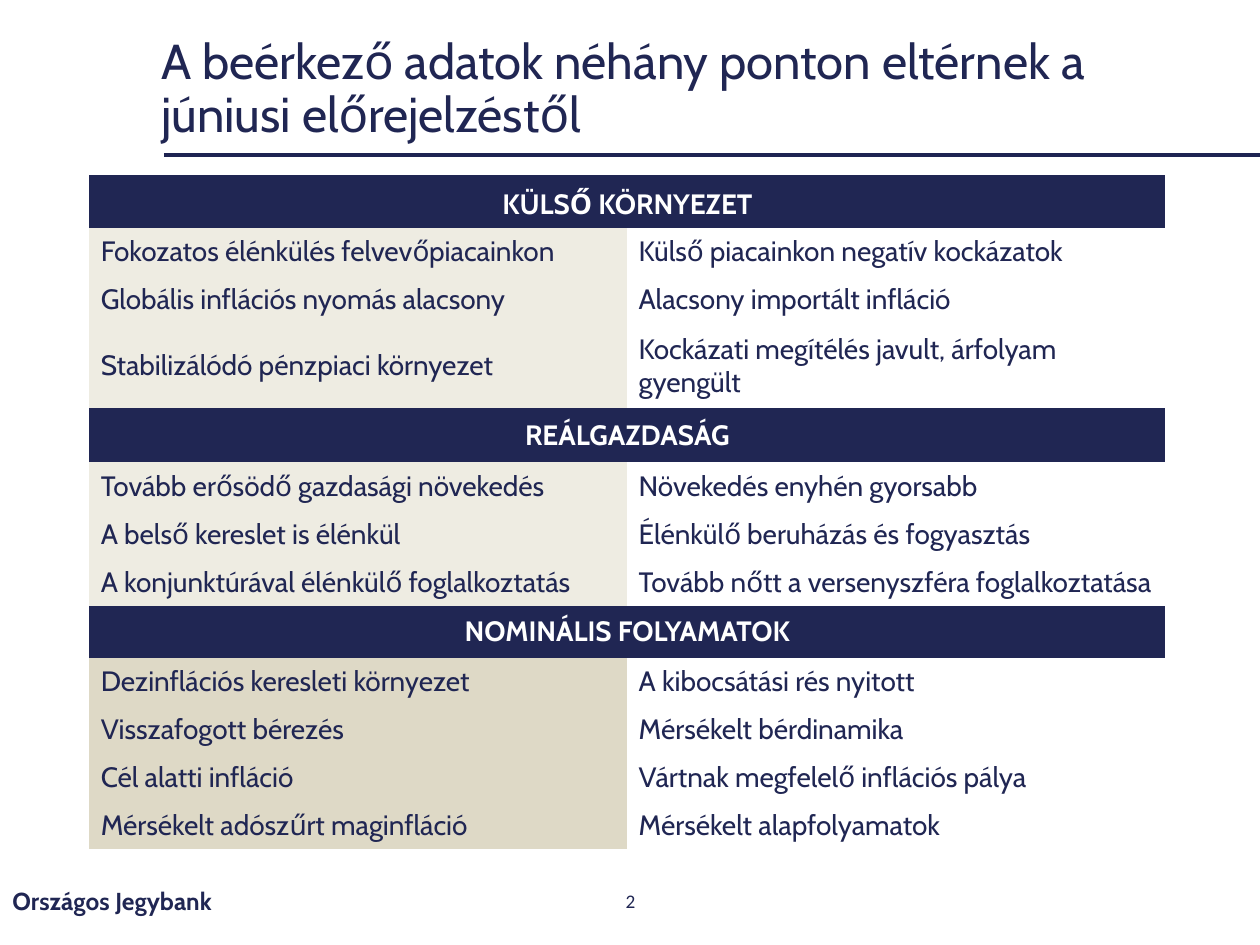
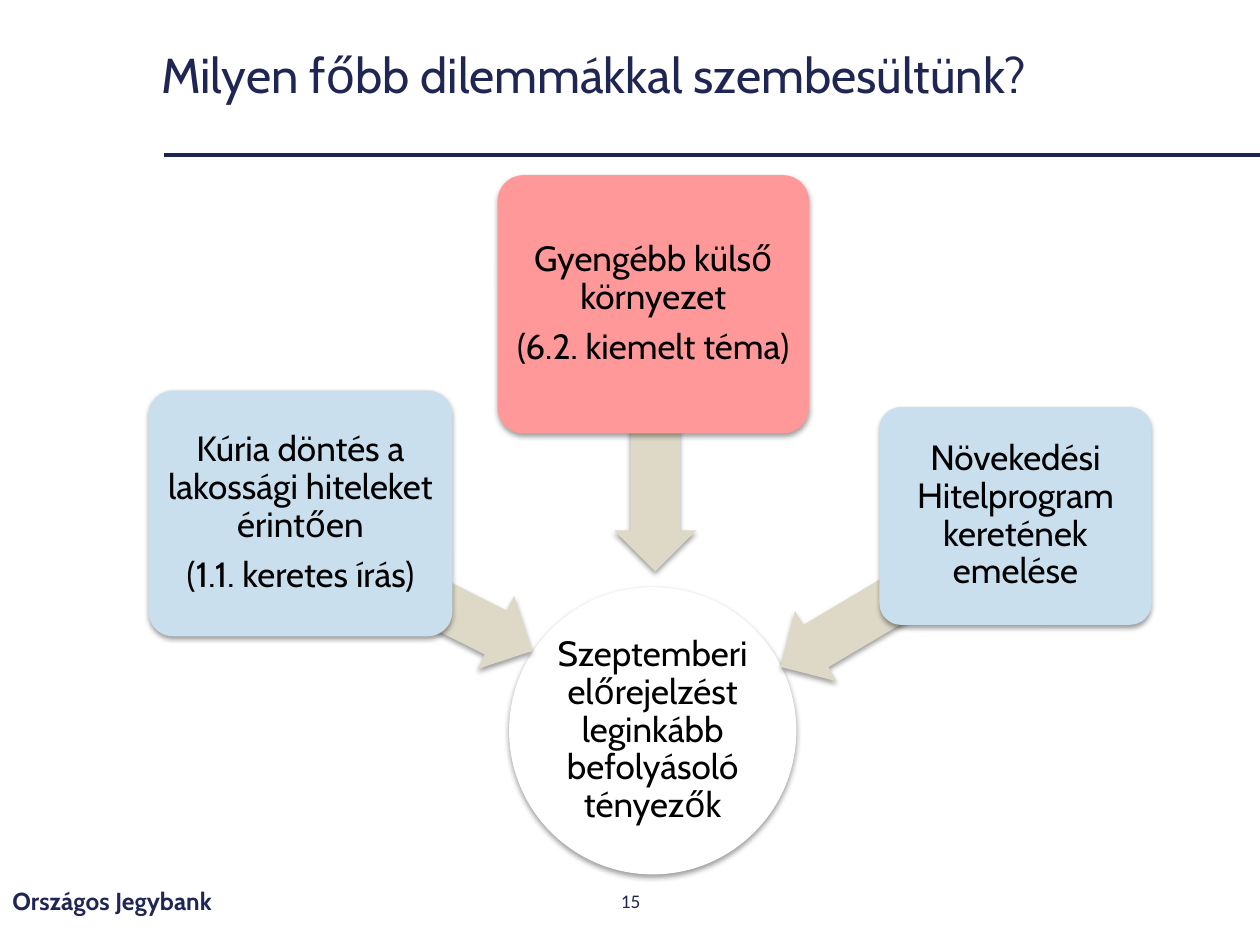
from lxml import etree
from pptx import Presentation
from pptx.dml.color import RGBColor
from pptx.enum.shapes import MSO_CONNECTOR, MSO_SHAPE
from pptx.enum.text import MSO_ANCHOR, PP_ALIGN
from pptx.oxml.ns import qn
from pptx.util import Inches, Pt

LEFT, CENTER = PP_ALIGN.LEFT, PP_ALIGN.CENTER
MIDDLE, BOTTOM = MSO_ANCHOR.MIDDLE, MSO_ANCHOR.BOTTOM
ROUND, OVAL = MSO_SHAPE.ROUNDED_RECTANGLE, MSO_SHAPE.OVAL
ARROW, STRAIGHT = MSO_SHAPE.LEFT_ARROW, MSO_CONNECTOR.STRAIGHT

# The slide is a grid of 100 columns and 75 rows
COLS, ROWS = 100, 75
NAVY, RULE, WHITE, BLACK = "202653", "1E2452", "FFFFFF", "000000"
PALE, SAND, BLUE, RED = "EEECE2", "DED9C6", "CADFEE", "FF9999"
FONT = "Cabin"
PLAIN = "{2D5ABB26-0587-4C30-8999-92F81FD0307C}"  # table style without grid

TABLE = [
    ("KÜLSŐ KÖRNYEZET", 4.2, PALE, [
        ("Fokozatos élénkülés felvevőpiacainkon", "Külső piacainkon negatív kockázatok"),
        ("Globális inflációs nyomás alacsony", "Alacsony importált infláció"),
        ("Stabilizálódó pénzpiaci környezet",
         "Kockázati megítélés javult, árfolyam gyengült")]),
    ("REÁLGAZDASÁG", 4.3, PALE, [
        ("Tovább erősödő gazdasági növekedés", "Növekedés enyhén gyorsabb"),
        ("A belső kereslet is élénkül", "Élénkülő beruházás és fogyasztás"),
        ("A konjunktúrával élénkülő foglalkoztatás",
         "Tovább nőtt a versenyszféra foglalkoztatása")]),
    ("NOMINÁLIS FOLYAMATOK", 4.1, SAND, [
        ("Dezinflációs keresleti környezet", "A kibocsátási rés nyitott"),
        ("Visszafogott bérezés", "Mérsékelt bérdinamika"),
        ("Cél alatti infláció", "Vártnak megfelelő inflációs pálya"),
        ("Mérsékelt adószűrt maginfláció", "Mérsékelt alapfolyamatok")]),
]
LINE, TALL = 3.8, 6.7  # heights of one-line and two-line rows
WRAP = 40  # letters that fit on one line

# Parts of the diagram: place inside its box, then turn or fill and text
GOAL = ((28.6, 32.7, 22.8, 22.8), WHITE,
        ["Szeptemberi előrejelzést leginkább befolyásoló tényezők"])
CAUSES = [
    ((22.4, 32.6, 8.5, 6.5), 206.7, (0, 17.1, 24.1, 19.5), BLUE,
     ["Kúria döntés a lakossági hiteleket érintően", "(1.1. keretes írás)"]),
    ((34.2, 22.2, 12, 6.5), 270, (27.7, 0, 24.7, 20.5), RED,
     ["Gyengébb külső környezet", "(6.2. kiemelt téma)"]),
    ((49.4, 33, 10.9, 6.5), 329.3, (58, 18.4, 21.6, 17.3), BLUE,
     ["Növekedési Hitelprogram keretének emelése"]),
]


def unit(count):
    return Inches(count * 0.1)


def frame(box):
    return [unit(side) for side in box]


def inside(box, part):
    return box[0] + part[0], box[1] + part[1], part[2], part[3]


def color(code):
    return RGBColor.from_string(code)


def write(body, texts, size, code=NAVY, align=LEFT, bold=False, face=FONT,
          space=None, gap=0):
    body.word_wrap = True
    for i, text in enumerate(texts):
        para = body.paragraphs[0] if i == 0 else body.add_paragraph()
        para.text, para.alignment = text, align
        if space:
            para.line_spacing = space
        if i:
            para.space_before = Pt(gap)
        font = para.font
        font.name, font.size, font.bold = face, Pt(size), bold
        font.color.rgb = color(code)


def label(slide, box, text, size, **style):
    body = slide.shapes.add_textbox(*frame(box)).text_frame
    body.vertical_anchor = MIDDLE
    write(body, [text], size, **style)


def base(deck, title, box, number):
    slide = deck.slides.add_slide(deck.slide_layouts[6])
    # Title and rule
    label(slide, box, title, 28, space=0.9)
    rule = slide.shapes.add_connector(
        STRAIGHT, unit(13), unit(12.3), unit(COLS), unit(12.3))
    rule.line.color.rgb, rule.line.width = color(RULE), Pt(2.25)
    etree.SubElement(rule._element.spPr, qn("a:effectLst"))
    # Footer
    label(slide, (0, 69.5, 33.8, 4), "Országos Jegybank", 14, bold=True)
    label(slide, (38.8, 69.5, 22.5, 4), str(number), 11, align=CENTER, face="Calibri")
    return slide


def fill_cell(cell, text, fill=None, head=False):
    cell.margin_left = cell.margin_right = unit(0.9)
    cell.margin_top = cell.margin_bottom = unit(0.5)
    cell.vertical_anchor = MIDDLE
    if fill:
        cell.fill.solid()
        cell.fill.fore_color.rgb = color(fill)
    else:
        cell.fill.background()
    write(cell.text_frame, [text], 16, WHITE if head else NAVY,
          CENTER if head else LEFT, head)


def add_grid(slide, box):
    # Flatten the sections to (height, texts, fill)
    rows = []
    for name, height, fill, pairs in TABLE:
        rows.append((height, (name,), NAVY))
        rows += [(TALL if len(pair[1]) > WRAP and " árfolyam " in pair[1] else LINE,
                  pair, fill) for pair in pairs]
    shape = slide.shapes.add_table(len(rows), 2, *frame(box))
    grid = shape.table
    grid.first_row = grid.horz_banding = False
    shape._element.find(".//" + qn("a:tableStyleId")).text = PLAIN
    for col in grid.columns:
        col.width = unit(box[2] / 2)
    for i, (height, texts, fill) in enumerate(rows):
        grid.rows[i].height = unit(height)
        first, last = grid.cell(i, 0), grid.cell(i, 1)
        if len(texts) == 1:
            first.merge(last)
            fill_cell(first, texts[0], fill, True)
        else:
            fill_cell(first, texts[0], fill)
            fill_cell(last, texts[1])
    grid.cell(0, 0).vertical_anchor = BOTTOM


def add_form(slide, kind, box, fill):
    form = slide.shapes.add_shape(kind, *frame(box))
    form.fill.solid()
    form.fill.fore_color.rgb = color(fill)
    form.line.fill.background()
    # Soft shadow straight below
    form.shadow.inherit = False
    glow = etree.SubElement(
        form._element.spPr.find(qn("a:effectLst")), qn("a:outerShdw"),
        blurRad=str(Pt(3.1)), dist=str(Pt(1.6)), dir="5400000", rotWithShape="0")
    tone = etree.SubElement(glow, qn("a:srgbClr"), val=BLACK)
    etree.SubElement(tone, qn("a:alpha"), val="38000")
    return form


def add_card(slide, kind, box, fill, texts, pad):
    card = add_form(slide, kind, box, fill)
    if kind == ROUND:
        card.adjustments[0] = 0.1
    body = card.text_frame
    body.margin_left = body.margin_right = unit(pad)
    body.margin_top = body.margin_bottom = unit(pad)
    body.vertical_anchor = MIDDLE
    write(body, texts, 20, BLACK, CENTER, space=0.9, gap=7)


def add_chart_of_causes(slide, box):
    place, fill, texts = GOAL
    add_card(slide, OVAL, inside(box, place), fill, texts, 0.1)
    for way, turn, place, fill, texts in CAUSES:
        arrow = add_form(slide, ARROW, inside(box, way), SAND)
        arrow.adjustments[0], arrow.adjustments[1] = 0.6, 0.5
        arrow.rotation = turn
        add_card(slide, ROUND, inside(box, place), fill, texts, 0.4)


def main():
    deck = Presentation()
    deck.slide_width, deck.slide_height = unit(COLS), unit(ROWS)
    slide = base(deck, "A beérkező adatok néhány ponton eltérnek a júniusi előrejelzéstől",
                 (11.8, 2, 86.2, 10.3), 2)
    add_grid(slide, (7.1, 13.9, 85.4, 53.5))
    slide = base(deck, "Milyen főbb dilemmákkal szembesültünk?",
                 (11.8, 2, 81.9, 8.3), 15)
    add_chart_of_causes(slide, (11.8, 13.9, 79.6, 55.5))
    deck.save("out.pptx")


if __name__ == "__main__":
    main()
